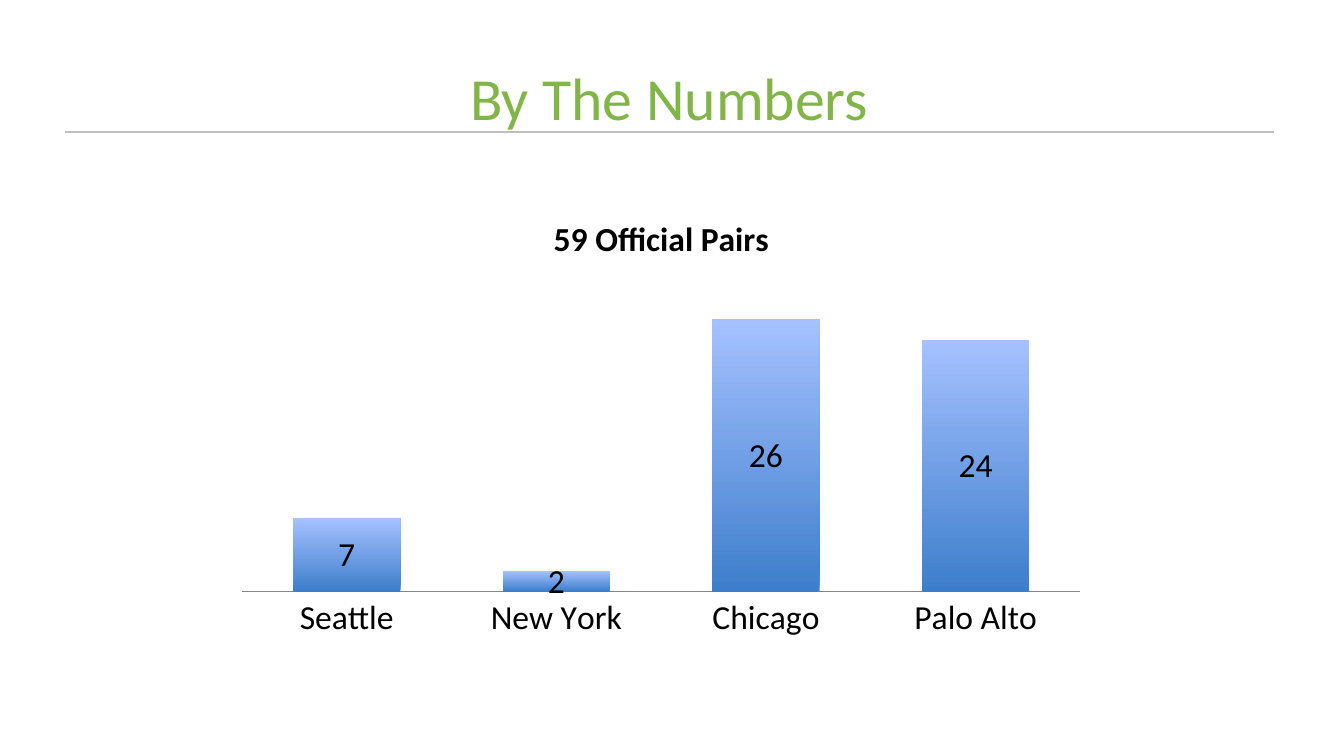
from lxml.etree import SubElement
from pptx import Presentation
from pptx.chart.data import CategoryChartData
from pptx.dml.color import RGBColor
from pptx.enum.chart import XL_CHART_TYPE, XL_LABEL_POSITION, XL_TICK_MARK
from pptx.enum.shapes import MSO_CONNECTOR
from pptx.enum.text import MSO_ANCHOR, PP_ALIGN
from pptx.oxml import parse_xml
from pptx.oxml.ns import nsdecls, qn
from pptx.util import Inches, Pt

GREEN = RGBColor(0x82, 0xB5, 0x48)
GRAY = RGBColor(0xBF, 0xBF, 0xBF)
AXIS_GRAY = RGBColor(0x86, 0x86, 0x86)
BLACK = RGBColor(0, 0, 0)
BAR_BOTTOM = RGBColor(0x3D, 0x7E, 0xCC)
BAR_TOP = RGBColor(0xA5, 0xC1, 0xFF)


def set_layout(element, index, target="", **fractions):
    """Place a chart part by fractions of the chart's size."""
    for old in element.findall(qn("c:layout")):
        element.remove(old)
    layout = parse_xml(f"<c:layout {nsdecls('c')}><c:manualLayout/></c:layout>")
    settings = {"layoutTarget": target} if target else {}
    settings |= {"xMode": "edge", "yMode": "edge"} | fractions
    for name, value in settings.items():
        SubElement(layout[0], qn(f"c:{name}")).set("val", str(value))
    element.insert(index, layout)


def format_font(font, **values):
    values = {"name": "Calibri", "size": Pt(18), "bold": False} | values
    color = values.pop("color", BLACK)
    for name, value in values.items():
        setattr(font, name, value)
    font.color.rgb = color


deck = Presentation()
deck.slide_width = Inches(10)
deck.slide_height = Inches(10 * 9 / 16)
page = deck.slides.add_slide(deck.slide_layouts[6])

# Heading and rule
box = page.shapes.add_textbox(Inches(0.37), Inches(0.39), Inches(9.22), Inches(0.66))
frame = box.text_frame
frame.word_wrap = True
frame.vertical_anchor = MSO_ANCHOR.MIDDLE
heading = frame.paragraphs[0]
heading.alignment = PP_ALIGN.CENTER
span = heading.add_run()
span.text = "By The Numbers"
format_font(span.font, size=Pt(32), color=GREEN)

rule = page.shapes.add_connector(
    MSO_CONNECTOR.STRAIGHT, Inches(0.48), Inches(0.98), Inches(9.48), Inches(0.98)
)
rule.line.color.rgb = GRAY
rule.line.width = Pt(1)
SubElement(rule._element.spPr, qn("a:effectLst"))

# Pairs per city
data = CategoryChartData()
data.categories = ["Seattle", "New York", "Chicago", "Palo Alto"]
data.add_series("Series 1", [7, 2, 26, 24])
chart = page.shapes.add_chart(
    XL_CHART_TYPE.COLUMN_STACKED,
    Inches(1.67), Inches(1.42), Inches(6.5), Inches(3.39), data,
).chart
chart.has_legend = False
format_font(chart.font)

title = chart.chart_title
span = title.text_frame.paragraphs[0].add_run()
span.text = "59 Official Pairs"
format_font(span.font, bold=True)
set_layout(title._element, 1, x=0.37, y=0.04)

value_axis = chart.value_axis
value_axis.minimum_scale, value_axis.maximum_scale = 0, 30
value_axis.has_major_gridlines = False
value_axis.visible = False
city_axis = chart.category_axis
city_axis.major_tick_mark = XL_TICK_MARK.NONE
city_axis.format.line.color.rgb = AXIS_GRAY
city_axis.format.line.width = Pt(0.75)

plot = chart.plots[0]
plot.gap_width, plot.overlap = 95, 100
plot.vary_by_categories = False
set_layout(plot._element.getparent(), 0, "inner", x=0.02, y=0.19, w=0.96, h=0.69)

fill = plot.series[0].format.fill
fill.gradient()
fill.gradient_angle = 90
for stop, color in zip(fill.gradient_stops, (BAR_BOTTOM, BAR_TOP)):
    stop.color.rgb = color

plot.has_data_labels = True
labels = plot.data_labels
labels.show_value = True
labels.position = XL_LABEL_POSITION.CENTER
format_font(labels.font)

deck.save("out.pptx")
